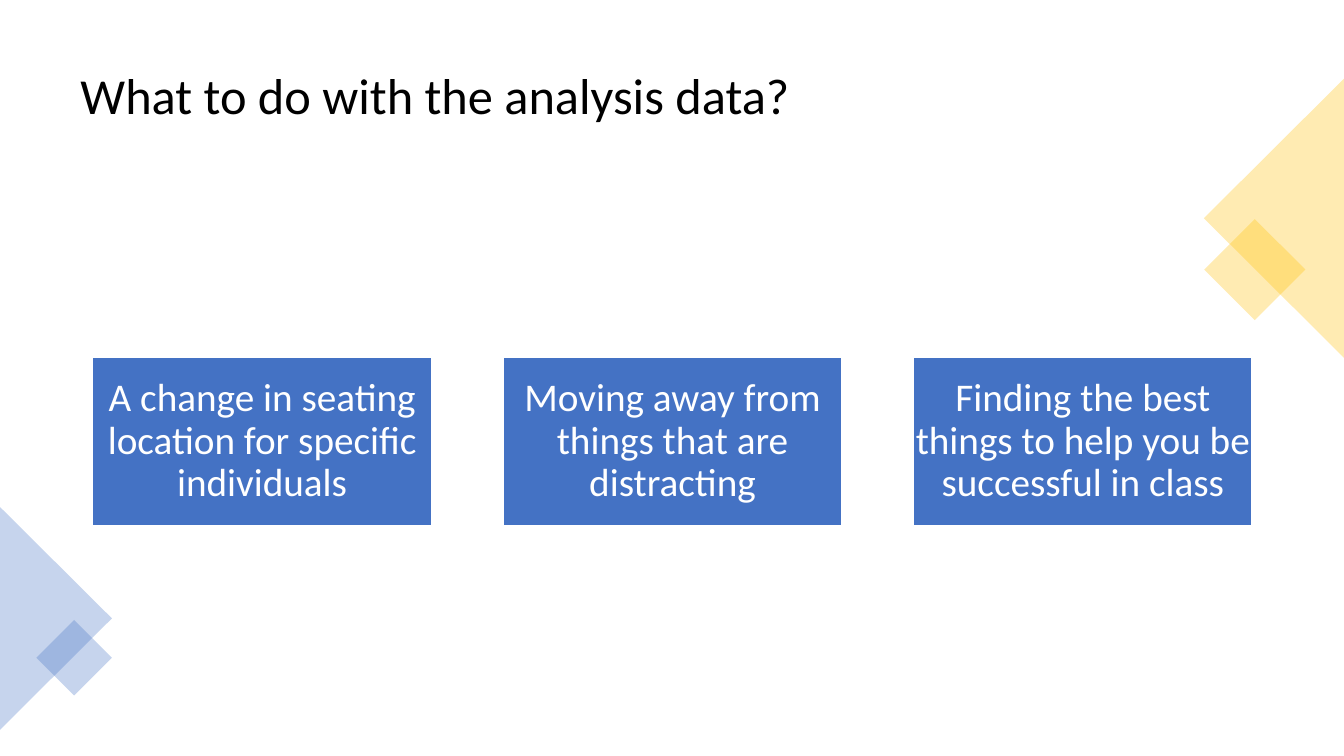
from dataclasses import dataclass

from lxml import etree
from pptx import Presentation
from pptx.dml.color import RGBColor
from pptx.enum.shapes import MSO_SHAPE as SHAPE
from pptx.enum.text import MSO_ANCHOR as ANCHOR, PP_ALIGN as ALIGN
from pptx.oxml.ns import qn
from pptx.util import Inches, Pt


@dataclass(frozen=True)
class Theme:
    font: str = "Calibri"
    blue: str = "4472C4"
    gold: str = "FFC000"
    white: str = "FFFFFF"
    black: str = "000000"
    title_size: int = 36
    box_size: int = 28
    line_spacing: float = 0.9
    accent_opacity: int = 30


THEME = Theme()
TITLE = "What to do with the analysis data?"
ACTIONS = [
    "A change in seating location for specific individuals",
    "Moving away from things that are distracting",
    "Finding the best things to help you be successful in class",
]
ACCENTS = [
    (SHAPE.RECTANGLE, (12.09, 2.32, 0.71, 0.71), 45, THEME.gold),
    (SHAPE.ISOSCELES_TRIANGLE, (11.25, 1.47, 2.77, 1.39), 270, THEME.gold),
    (SHAPE.ISOSCELES_TRIANGLE, (-0.55, 5.58, 2.21, 1.11), 90, THEME.blue),
    (SHAPE.RECTANGLE, (0.47, 6.26, 0.53, 0.53), 45, THEME.blue),
]
TITLE_AREA = (0.7, 0.35, 11.93, 1.24)
BOX_LEFT, BOX_TOP, BOX_WIDTH = 0.92, 3.54, 3.36
BOX_HEIGHT = BOX_WIDTH / 2
BOX_STEP = 4.07
BOX_INSET = 0.02


def add_filled(slide, kind, area, color):
    sp = slide.shapes.add_shape(kind, *map(Inches, area))
    sp.shadow.inherit = False
    sp.fill.solid()
    sp.fill.fore_color.rgb = RGBColor.from_string(color)
    sp.line.fill.background()
    return sp


def write(sp, text, size, color, align):
    tf = sp.text_frame
    tf.word_wrap = True
    tf.vertical_anchor = ANCHOR.MIDDLE
    p = tf.paragraphs[0]
    p.alignment = align
    p.line_spacing = THEME.line_spacing
    r = p.add_run()
    r.text = text
    r.font.name = THEME.font
    r.font.size = Pt(size)
    r.font.color.rgb = RGBColor.from_string(color)
    return tf


def add_accent(slide, kind, area, rotation, color):
    sp = add_filled(slide, kind, area, color)
    sp.rotation = rotation
    clr = next(sp.element.spPr.iter(qn("a:srgbClr")))
    alpha = etree.SubElement(clr, qn("a:alpha"))
    alpha.set("val", str(THEME.accent_opacity * 1000))


def add_action(slide, index, text):
    area = (BOX_LEFT + index * BOX_STEP, BOX_TOP, BOX_WIDTH, BOX_HEIGHT)
    sp = add_filled(slide, SHAPE.RECTANGLE, area, THEME.blue)
    sp.line.color.rgb = RGBColor.from_string(THEME.white)
    sp.line.width = Pt(1)
    tf = write(sp, text, THEME.box_size, THEME.white, ALIGN.CENTER)
    tf.margin_left = tf.margin_right = Inches(BOX_INSET)
    tf.margin_top = tf.margin_bottom = Inches(BOX_INSET)


def main():
    prs = Presentation()
    prs.slide_width, prs.slide_height = Inches(13.33), Inches(7.5)
    s = prs.slides.add_slide(prs.slide_layouts[6])
    title = s.shapes.add_textbox(*map(Inches, TITLE_AREA))
    write(title, TITLE, THEME.title_size, THEME.black, ALIGN.LEFT)
    for accent in ACCENTS:
        add_accent(s, *accent)
    for index, text in enumerate(ACTIONS):
        add_action(s, index, text)
    prs.save("out.pptx")


if __name__ == "__main__":
    main()
